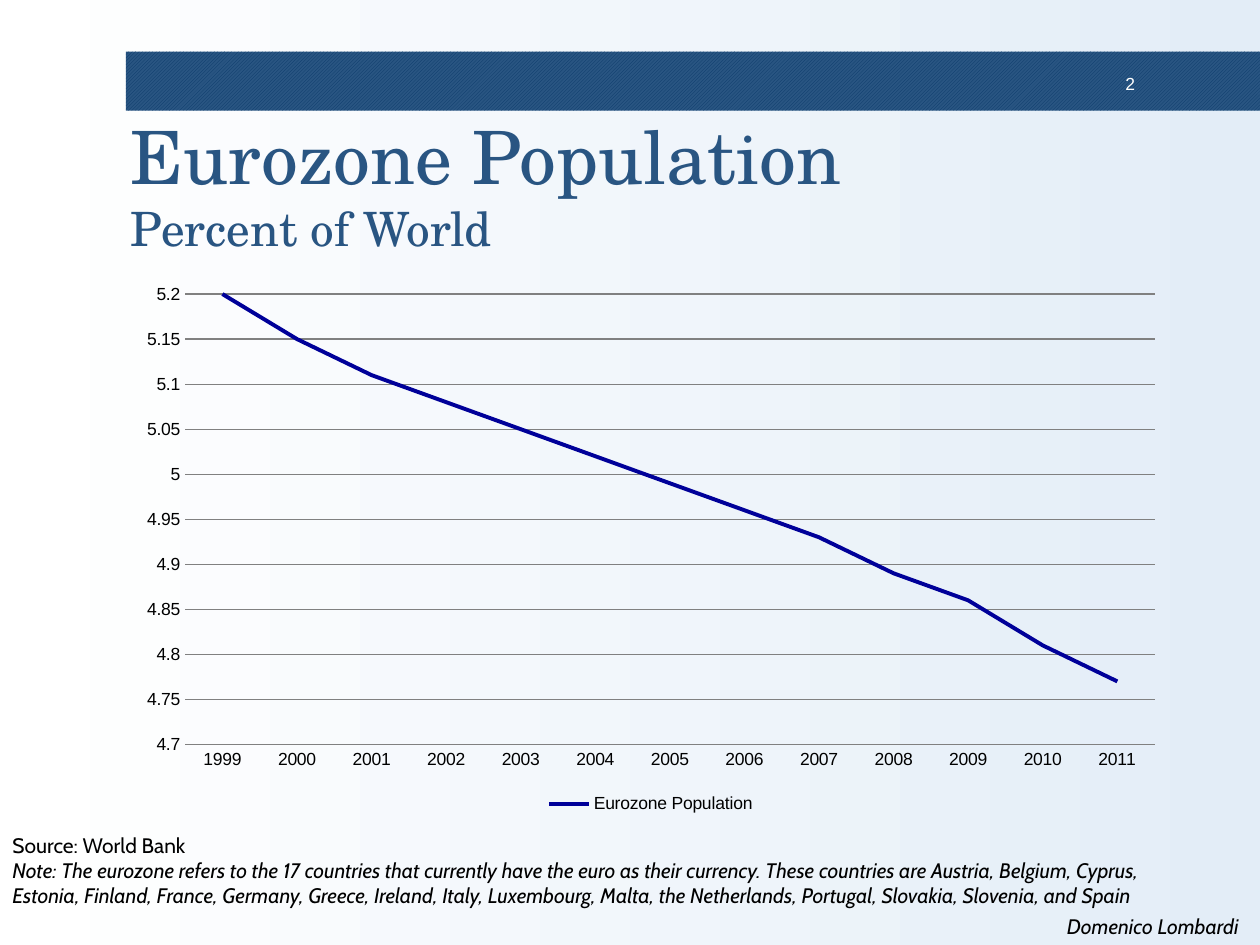
from dataclasses import dataclass

from lxml.etree import SubElement
from pptx import Presentation
from pptx.chart.data import CategoryChartData
from pptx.dml.color import RGBColor
from pptx.enum.chart import XL_CHART_TYPE as ChartType, XL_LEGEND_POSITION as LegendPos
from pptx.enum.chart import XL_MARKER_STYLE as Marker, XL_TICK_MARK as Tick
from pptx.enum.dml import MSO_PATTERN as Pattern
from pptx.enum.shapes import MSO_SHAPE as Shape
from pptx.enum.text import MSO_ANCHOR as Anchor, MSO_AUTO_SIZE as AutoSize, PP_ALIGN as Align
from pptx.util import Cm, Pt


@dataclass(frozen=True)
class Theme:
    """Colours, fonts and type sizes of the slide."""
    blue: str = "295582"
    stripe: str = "083868"
    pale: str = "E3EDF7"
    white: str = "FFFFFF"
    black: str = "000000"
    grid: str = "808080"
    series: str = "000099"
    heading: str = "TeX Gyre Schola"
    body: str = "Cabin"
    figures: str = "Arial"
    title: int = 42
    subtitle: int = 27
    note: int = 12
    small: int = 10


@dataclass(frozen=True)
class Box:
    """A rectangle in centimetres."""
    x: float
    y: float
    w: float
    h: float

    def inner(self, dx, dy, w, h):
        """Return a box placed relative to this one."""
        return Box(self.x + dx, self.y + dy, w, h)

    def emu(self):
        """Return left, top, width and height as lengths."""
        return Cm(self.x), Cm(self.y), Cm(self.w), Cm(self.h)


T = Theme()
YEARS = range(1999, 2012)
SHARES = (5.2, 5.15, 5.11, 5.08, 5.05, 5.02, 4.99, 4.96, 4.93, 4.89, 4.86, 4.81, 4.77)
NOTE = (
    "Note: The eurozone refers to the 17 countries that currently have the euro as their "
    "currency. These countries are Austria, Belgium, Cyprus, Estonia, Finland, France, Germany, "
    "Greece, Ireland, Italy, Luxembourg, Malta, the Netherlands, Portugal, Slovakia, Slovenia, "
    "and Spain"
)


def rgb(value):
    """Turn a hex string into a colour."""
    return RGBColor.from_string(value)


def style(font, name, size, color, italic=None):
    """Set the face, size and colour of a font."""
    font.name, font.size, font.italic = name, Pt(size), italic
    font.color.rgb = rgb(color)


def add_text(s, box, text, name, size, color, align=Align.LEFT, wrap=True, italic=None):
    """Add a text box in one style and return its frame."""
    tf = s.shapes.add_textbox(*box.emu()).text_frame
    tf.text = text
    tf.word_wrap = wrap
    tf.auto_size = AutoSize.SHAPE_TO_FIT_TEXT
    for p in tf.paragraphs:
        p.alignment = align
        for r in p.runs:
            style(r.font, name, size, color, italic)
    return tf


def set_insets(tf, x, y):
    """Set the side and top margins of a text frame."""
    tf.margin_left = tf.margin_right = Cm(x)
    tf.margin_top = tf.margin_bottom = Cm(y)


def paint_background(s):
    """Fill the slide with a gradient from left to right."""
    fill = s.background.fill
    fill.gradient()
    fill.gradient_angle = 0
    for stop, color, position in zip(fill.gradient_stops, (T.white, T.pale), (0, 1)):
        stop.color.rgb = rgb(color)
        stop.position = position


def add_banner(s, box, number):
    """Draw the striped band with the page number."""
    sp = s.shapes.add_shape(Shape.RECTANGLE, *box.emu())
    sp.shadow.inherit = False
    sp.line.fill.background()
    sp.fill.patterned()
    sp.fill.pattern = Pattern.LIGHT_UPWARD_DIAGONAL
    sp.fill.fore_color.rgb = rgb(T.stripe)
    sp.fill.back_color.rgb = rgb(T.blue)
    tf = add_text(s, box.inner(19.48, 0.33, 1.04, 0.58), number, T.figures, T.small, T.white,
                  Align.RIGHT)
    set_insets(tf, 0.18, 0.1)


def add_title(s, box, title, subtitle):
    """Write the title with a smaller second line."""
    tf = add_text(s, box, f"{title}\v{subtitle}", T.heading, T.title, T.blue)
    tf.auto_size = AutoSize.NONE
    tf.vertical_anchor = Anchor.MIDDLE
    set_insets(tf, 0.1, 0.1)
    tf.paragraphs[0].runs[1].font.size = Pt(T.subtitle)


def add_line_chart(s, box):
    """Plot the population share by year."""
    data = CategoryChartData()
    data.categories = [str(year) for year in YEARS]
    data.add_series("Eurozone Population", SHARES)
    chart = s.shapes.add_chart(ChartType.LINE, *box.emu(), data).chart
    style(chart.font, T.figures, T.small, T.black)
    chart.has_title = False
    chart.has_legend = True
    chart.legend.position = LegendPos.BOTTOM
    chart.legend.include_in_layout = False

    line = chart.plots[0].series[0]
    line.smooth = False
    line.marker.style = Marker.NONE
    line.format.line.color.rgb = rgb(T.series)
    line.format.line.width = Pt(2.25)
    chart.plots[0].vary_by_categories = False

    years, shares = chart.category_axis, chart.value_axis
    for axis in (years, shares):
        axis.major_tick_mark = axis.minor_tick_mark = Tick.NONE
    shares.minimum_scale, shares.maximum_scale, shares.major_unit = 4.7, 5.2, 0.05
    shares.tick_labels.number_format = "General"
    shares.tick_labels.number_format_is_linked = False
    shares.format.line.fill.background()
    for rule in (years.format.line, shares.major_gridlines.format.line):
        rule.color.rgb = rgb(T.grid)
        rule.width = Pt(0.75)


def add_footer(s, box, source, note, author):
    """Write the source, the note and the author."""
    tf = add_text(s, box.inner(0, 0, 24.46, 2.82), f"{source}\n{note}", T.body, T.note, T.black)
    tf.paragraphs[1].runs[0].font.italic = True
    add_text(s, box.inner(21.08, 1.63, 4.32, 0.76), author, T.body, T.note, T.black,
             Align.CENTER, wrap=False, italic=True)


def main():
    """Build the slide and save it."""
    prs = Presentation()
    prs.slide_width, prs.slide_height = Cm(25.4), Cm(19.05)
    s = prs.slides.add_slide(prs.slide_layouts[6])
    paint_background(s)
    add_banner(s, Box(2.54, 1.04, 22.86, 1.19), "2")
    add_title(s, Box(2.54, 2.11, 22.86, 3.18), "Eurozone Population", "Percent of World")
    add_line_chart(s, Box(2.54, 5.51, 21.16, 11))
    add_footer(s, Box(0, 16.66, 25.4, 2.39), "Source: World Bank", NOTE, "Domenico Lombardi")
    prs.save("out.pptx")


if __name__ == "__main__":
    main()
